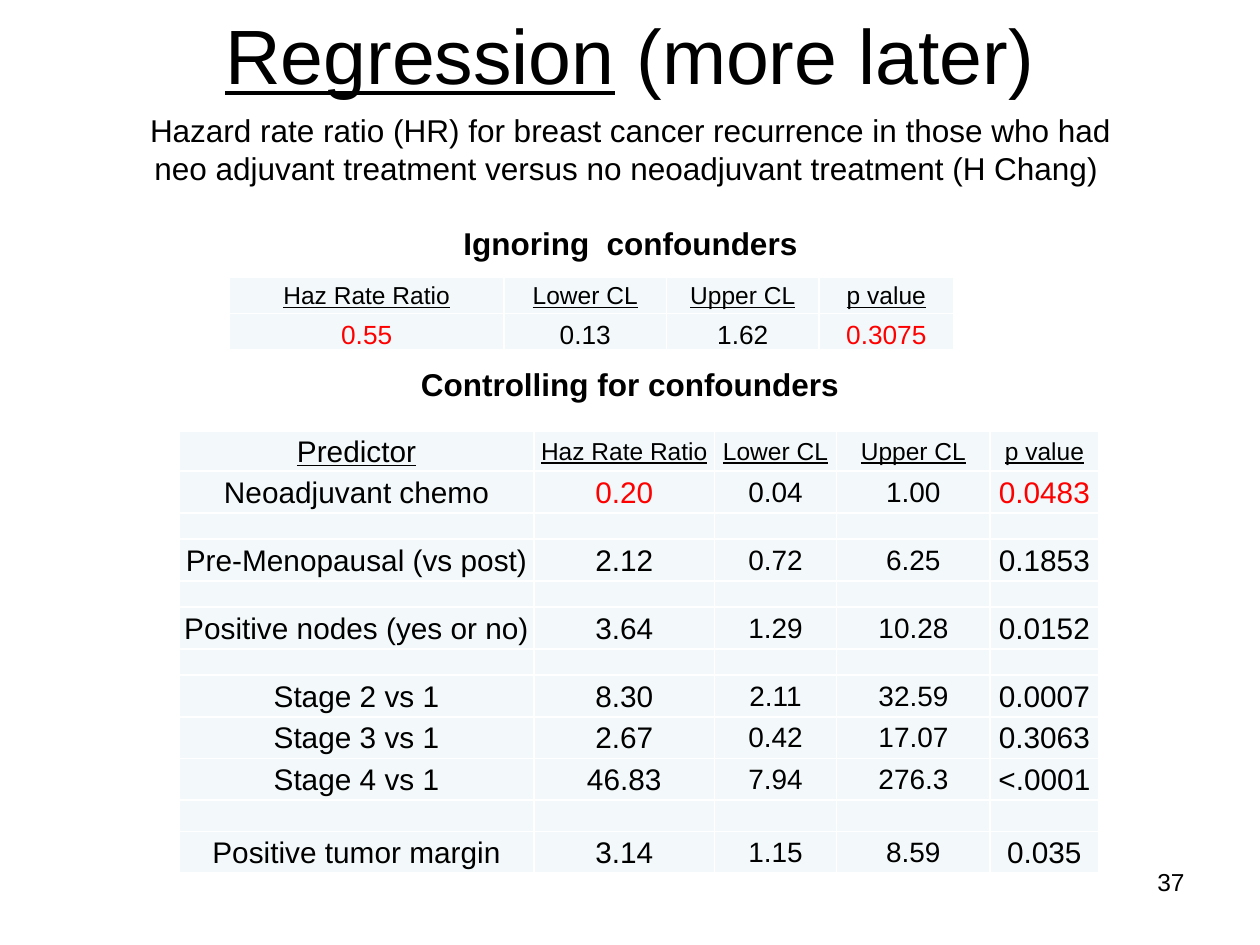
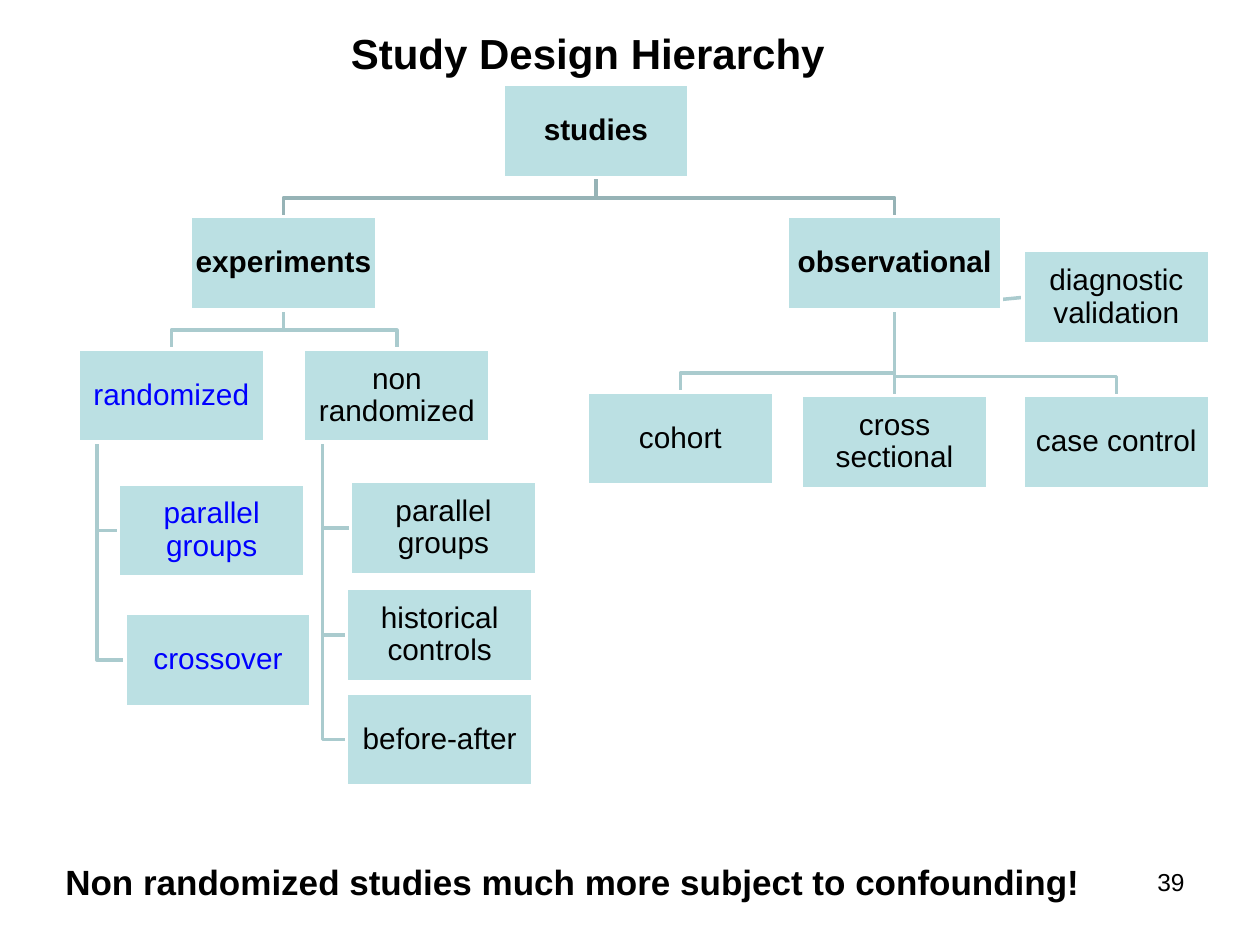
from lxml import etree
from pptx import Presentation
from pptx import util as u
from pptx.dml.color import RGBColor
from pptx.enum import shapes, text
from pptx.oxml import ns

FONT = "Arial"
BLACK, WHITE, RED, BLUE = "000000", "FFFFFF", "FF0000", "0000FF"
CELL, BOX, LINE, TOP_LINE = "F3F9FA", "BBE0E3", "AACBCE", "96B3B6"
LEFT, CENTER, RIGHT = text.PP_ALIGN.LEFT, text.PP_ALIGN.CENTER, text.PP_ALIGN.RIGHT
MIDDLE, BOTTOM = text.MSO_ANCHOR.MIDDLE, text.MSO_ANCHOR.BOTTOM
rgb = RGBColor.from_string


def px(*lengths):
    return [u.Emu(n * 9144) for n in lengths]


def write(p, content, size=18, color=BLACK, bold=False, underline=False, align=CENTER):
    p.alignment = align
    r = p.add_run()
    r.text = content
    f = r.font
    f.name, f.size, f.bold, f.underline = FONT, u.Pt(size), bold, underline
    f.color.rgb = rgb(color)


prs = Presentation()
prs.slide_width, prs.slide_height = px(1000, 750)
regression, hierarchy = [prs.slides.add_slide(prs.slide_layouts[5]) for _ in range(2)]

titles = [
    (regression, (50, 3, 900, 80), [("Regression", dict(size=44, underline=True)),
                                    (" (more later)", dict(size=44))]),
    (hierarchy, (233, 17, 467, 50), [("Study Design Hierarchy", dict(size=24, bold=True))]),
]
for s, box, runs in titles:
    sp = s.shapes.title
    sp.left, sp.top, sp.width, sp.height = px(*box)
    tf = sp.text_frame
    tf.auto_size, tf.vertical_anchor = text.MSO_AUTO_SIZE.NONE, MIDDLE
    for content, style in runs:
        write(tf.paragraphs[0], content, **style)

number_box = (717, 683, 233, 52)
number_style = dict(size=14, align=RIGHT)
notes = [
    (regression, number_box, [("37", number_style)]),
    (hierarchy, number_box, [("39", number_style)]),
    (regression, (92, 83, 817, 131), [
        ("Hazard rate ratio (HR) for breast cancer recurrence in those who had "
         "neo adjuvant treatment versus no neoadjuvant treatment (H Chang) ", {}),
        ("Ignoring  confounders", dict(bold=True))]),
    (regression, (246, 285, 508, 40), [("Controlling for confounders", dict(bold=True))]),
    (hierarchy, (42, 678, 867, 44), [
        ("Non randomized studies much more subject to confounding!",
         dict(size=20, bold=True, align=LEFT))]),
]
for s, box, paragraphs in notes:
    tf = s.shapes.add_textbox(*px(*box)).text_frame
    tf.word_wrap = True
    for i, (content, style) in enumerate(paragraphs):
        p = tf.add_paragraph() if i else tf.paragraphs[0]
        if i:
            p.space_before = u.Pt(21.5)
        write(p, content, **style)

header = ["Haz Rate Ratio", "Lower CL", "Upper CL", "p value"]
gap = [""] * 5
tables = [
    dict(at=(182, 220), cols=[218, 129, 121, 107], rows=[29, 29], anchor=BOTTOM,
         head_sizes=[14] * 4, sizes=[15] * 4,
         cells=[header, ["0.55", "0.13", "1.62", "0.3075"]]),
    dict(at=(142, 342), cols=[282, 143, 97, 122, 86], anchor=MIDDLE,
         rows=[32, 33, 21, 33, 21, 33, 21, 33, 33, 33, 25, 33],
         head_sizes=[17, 14, 14, 14, 14], sizes=[17, 17, 16, 16, 17],
         cells=[["Predictor"] + header,
                ["Neoadjuvant chemo", "0.20", "0.04", "1.00", "0.0483"], gap,
                ["Pre-Menopausal (vs post)", "2.12", "0.72", "6.25", "0.1853"], gap,
                ["Positive nodes (yes or no)", "3.64", "1.29", "10.28", "0.0152"], gap,
                ["Stage 2 vs 1", "8.30", "2.11", "32.59", "0.0007"],
                ["Stage 3 vs 1", "2.67", "0.42", "17.07", "0.3063"],
                ["Stage 4 vs 1", "46.83", "7.94", "276.3", "<.0001"], gap,
                ["Positive tumor margin", "3.14", "1.15", "8.59", "0.035"]]),
]
for t in tables:
    cols, rows, cells = t["cols"], t["rows"], t["cells"]
    tbl = regression.shapes.add_table(
        len(rows), len(cols), *px(*t["at"], sum(cols), sum(rows))).table
    tbl.first_row = tbl.horz_banding = False
    for col, width in zip(tbl.columns, px(*cols)):
        col.width = width
    for i, (row, height) in enumerate(zip(tbl.rows, px(*rows))):
        row.height = height
        for j, cell in enumerate(row.cells):
            cell.margin_left, cell.margin_top, cell.margin_right, cell.margin_bottom = px(1, 1, 1, 0)
            cell.vertical_anchor = t["anchor"] if i else MIDDLE
            p = cell.text_frame.paragraphs[0]
            if cells[i][j]:
                key_value = i == 1 and cells[0][j] in ("Haz Rate Ratio", "p value")
                write(p, cells[i][j], size=t["sizes" if i else "head_sizes"][j],
                      color=RED if key_value else BLACK, underline=i == 0)
            else:
                etree.SubElement(p._p, ns.qn("a:endParaRPr"), sz="1000")
            tcPr = cell._tc.get_or_add_tcPr()
            for side in ("lnL", "lnR", "lnT", "lnB"):
                ln = etree.SubElement(tcPr, ns.qn("a:" + side), w="12700")
                fill = etree.SubElement(ln, ns.qn("a:solidFill"))
                etree.SubElement(fill, ns.qn("a:srgbClr"), val=WHITE)
            cell.fill.solid()
            cell.fill.fore_color.rgb = rgb(CELL)

BOX_W, BOX_H, STEP = 148, 74, 15
nodes = {
    "studies": ("studies", 399, 67),
    "experiments": ("experiments", 151, 172),
    "observational": ("observational", 625, 172),
    "randomized": ("randomized", 62, 277),
    "non randomized": ("non randomized", 241, 277),
    "parallel": ("parallel groups", 94, 384),
    "crossover": ("crossover", 99, 487),
    "non parallel": ("parallel groups", 278, 382),
    "historical": ("historical controls", 275, 467),
    "before-after": ("before-after", 275, 550),
    "cohort": ("cohort", 466, 311),
    "cross": ("cross sectional", 636, 314),
    "case": ("case control", 812, 314),
    "diagnostic": ("diagnostic validation", 812, 199),
}
widths = {"observational": 170}
main_nodes = ("studies", "experiments", "observational")
blue_nodes = ("randomized", "parallel", "crossover")
links = [
    ("observational", "direct", ["diagnostic"]),
    ("observational", "down", ["case", "cross", "cohort"]),
    ("experiments", "down", ["non randomized", "randomized"]),
    ("non randomized", "hang", ["historical", "before-after", "non parallel"]),
    ("randomized", "hang", ["crossover", "parallel"]),
    ("studies", "down", ["observational", "experiments"]),
]
for parent, route, children in links:
    _, x, y = nodes[parent]
    mid, bottom = x + widths.get(parent, BOX_W) // 2, y + BOX_H
    for child in children:
        _, cx, cy = nodes[child]
        child_mid, side = cx + widths.get(child, BOX_W) // 2, cy + BOX_H // 2
        if route == "hang":
            points = [(x + STEP, bottom), (x + STEP, side), (cx, side)]
        elif route == "direct":
            points = [(mid, bottom), (cx, side)]
        elif child_mid == mid:
            points = [(mid, bottom), (mid, cy)]
        else:
            points = [(mid, bottom), (mid, cy - STEP), (child_mid, cy - STEP), (child_mid, cy)]
        if len(points) == 2:
            sp = hierarchy.shapes.add_connector(
                shapes.MSO_CONNECTOR.STRAIGHT, *px(*points[0], *points[1]))
            etree.SubElement(sp._element.spPr, ns.qn("a:effectLst"))
        else:
            fb = hierarchy.shapes.build_freeform(*points[0], scale=9144)
            fb.add_line_segments(points[1:], close=False)
            sp = fb.convert_to_shape()
            sp.fill.background()
            sp.shadow.inherit = False
        sp.line.color.rgb = rgb(TOP_LINE if parent == "studies" else LINE)
        sp.line.width = u.Pt(2)

for name, (label, x, y) in nodes.items():
    sp = hierarchy.shapes.add_shape(
        shapes.MSO_SHAPE.RECTANGLE, *px(x, y, widths.get(name, BOX_W), BOX_H))
    sp.shadow.inherit = False
    sp.fill.solid()
    sp.fill.fore_color.rgb = rgb(BOX)
    sp.line.color.rgb = rgb(WHITE)
    sp.line.width = u.Pt(2)
    tf = sp.text_frame
    tf.word_wrap, tf.vertical_anchor = True, MIDDLE
    tf.margin_left, tf.margin_top, tf.margin_right, tf.margin_bottom = px(1, 1, 1, 1)
    p = tf.paragraphs[0]
    p.line_spacing = 0.9
    write(p, label, size=17, bold=name in main_nodes,
          color=BLUE if name in blue_nodes else BLACK)

prs.save("out.pptx")
